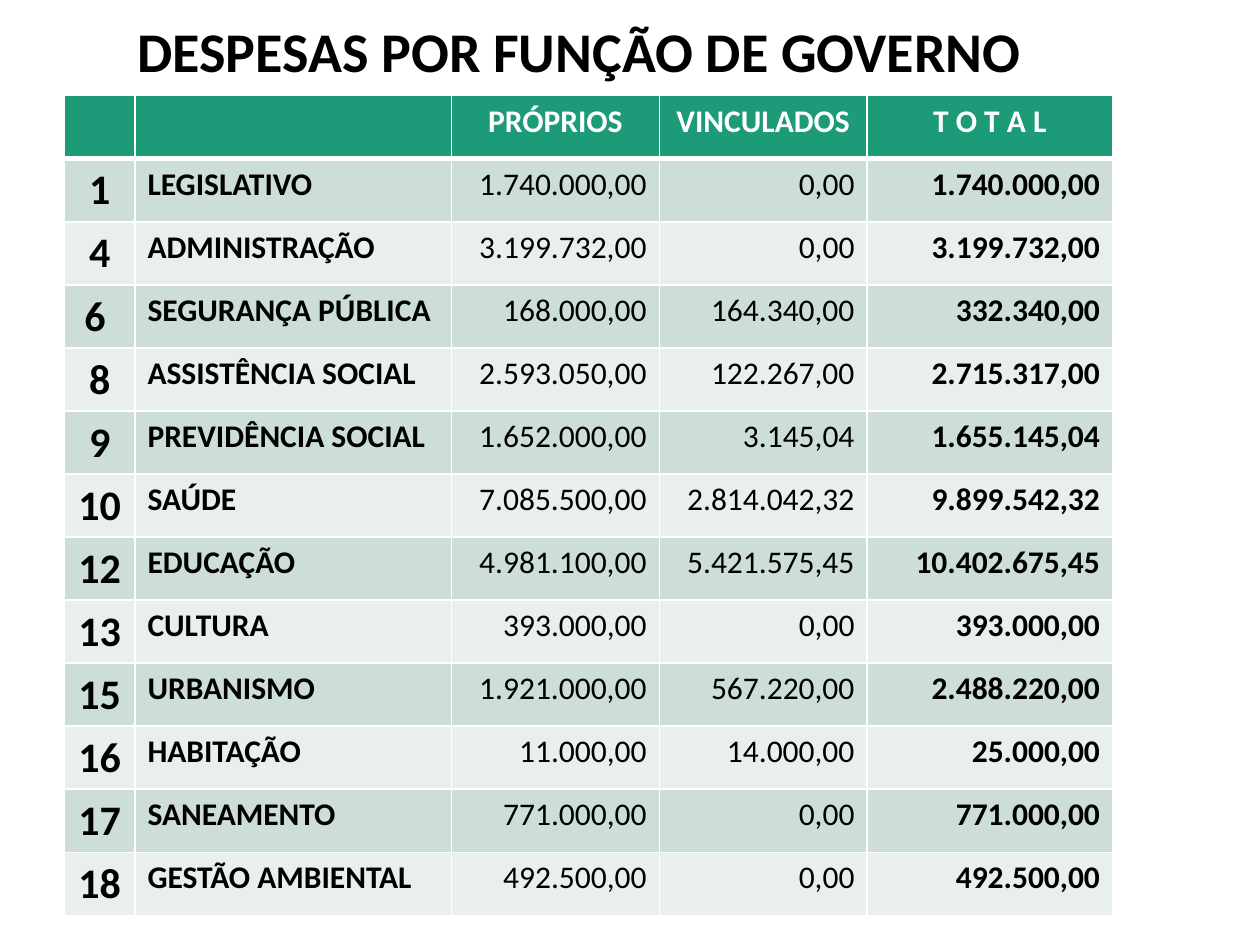
import pptx
import pptx.util
import pptx.dml.color
import pptx.enum.text
import pptx.oxml
import pptx.oxml.ns

Cm, Pt = pptx.util.Cm, pptx.util.Pt
RGBColor = pptx.dml.color.RGBColor
ALIGN = pptx.enum.text.PP_ALIGN
ANCHOR = pptx.enum.text.MSO_ANCHOR

BLACK = RGBColor(0x00, 0x00, 0x00)
WHITE = RGBColor(0xFF, 0xFF, 0xFF)
GREEN = RGBColor(0x1D, 0x9A, 0x78)
BANDS = [RGBColor(0xCD, 0xDE, 0xD6), RGBColor(0xE8, 0xEF, 0xEC)]

TITLE = "DESPESAS POR FUNÇÃO DE GOVERNO"
HEADS = ["", "", "PRÓPRIOS", "VINCULADOS", "T O T A L"]
COSTS = [
    ("1", "LEGISLATIVO", "1.740.000,00", "0,00", "1.740.000,00"),
    ("4", "ADMINISTRAÇÃO", "3.199.732,00", "0,00", "3.199.732,00"),
    ("6 ", "SEGURANÇA PÚBLICA", "168.000,00", "164.340,00", "332.340,00"),
    ("8", "ASSISTÊNCIA SOCIAL", "2.593.050,00", "122.267,00", "2.715.317,00"),
    ("9", "PREVIDÊNCIA SOCIAL", "1.652.000,00", "3.145,04", "1.655.145,04"),
    ("10", "SAÚDE", "7.085.500,00", "2.814.042,32", "9.899.542,32"),
    ("12", "EDUCAÇÃO", "4.981.100,00", "5.421.575,45", "10.402.675,45"),
    ("13", "CULTURA", "393.000,00", "0,00", "393.000,00"),
    ("15", "URBANISMO", "1.921.000,00", "567.220,00", "2.488.220,00"),
    ("16", "HABITAÇÃO", "11.000,00", "14.000,00", "25.000,00"),
    ("17", "SANEAMENTO", "771.000,00", "0,00", "771.000,00"),
    ("18", "GESTÃO AMBIENTAL", "492.500,00", "0,00", "492.500,00"),
]
WIDTHS = [1.42, 6.38, 4.19, 4.19, 4.95]
FORMATS = [
    dict(size=24, bold=True, align=ALIGN.CENTER),
    dict(bold=True, align=ALIGN.LEFT),
    dict(align=ALIGN.RIGHT),
    dict(align=ALIGN.RIGHT),
    dict(bold=True, align=ALIGN.RIGHT),
]


def write(frame, text, size=18, bold=False, color=BLACK, align=ALIGN.LEFT,
          font="Calibri", space=None):
    line = frame.paragraphs[0]
    line.alignment = align
    line.line_spacing = space
    if not text:
        return
    run = line.add_run()
    run.text = text
    run.font.name = font
    run.font.size = Pt(size)
    run.font.bold = bold
    run.font.color.rgb = color


def edge(cell, base):
    """Draw white cell borders; base is the width in points of the lower one."""
    props = cell._tc.get_or_add_tcPr()
    sides = [("L", 1), ("R", 1), ("T", 1), ("B", base)]
    for spot, (side, width) in enumerate(sides):
        props.insert(spot, pptx.oxml.parse_xml(
            f'<a:ln{side} {pptx.oxml.ns.nsdecls("a")} w="{Pt(width)}">'
            f'<a:solidFill><a:srgbClr val="{WHITE}"/></a:solidFill></a:ln{side}>'))


class Page:
    def __init__(self, deck, font):
        self.font = font
        self.slide = deck.slides.add_slide(deck.slide_layouts[6])

    def title(self, text, left, top, width, height):
        box = self.slide.shapes.add_textbox(Cm(left), Cm(top), Cm(width), Cm(height))
        frame = box.text_frame
        frame.word_wrap = True
        frame.vertical_anchor = ANCHOR.MIDDLE
        write(frame, text, size=32, bold=True, align=ALIGN.CENTER,
              font=self.font, space=0.9)

    def cell(self, cell, text, fill, base=1, **style):
        cell.fill.solid()
        cell.fill.fore_color.rgb = fill
        edge(cell, base)
        write(cell.text_frame, text, font=self.font, **style)

    def table(self, heads, rows, left, top, widths, height):
        count = len(rows) + 1
        grid = self.slide.shapes.add_table(
            count, len(heads), Cm(left), Cm(top),
            Cm(sum(widths)), Cm(height * count)).table
        for column, width in zip(grid.columns, widths):
            column.width = Cm(width)
        for row in grid.rows:
            row.height = Cm(height)
        for col, head in enumerate(heads):
            self.cell(grid.cell(0, col), head, GREEN, base=3, bold=True,
                      color=WHITE, align=ALIGN.CENTER)
        for row, texts in enumerate(rows, 1):
            for col, text in enumerate(texts):
                self.cell(grid.cell(row, col), text, BANDS[(row - 1) % 2],
                          **FORMATS[col])


def main():
    deck = pptx.Presentation()
    deck.slide_width, deck.slide_height = Cm(25.4), Cm(19.05)
    page = Page(deck, "Calibri")
    page.title(TITLE, 1.1, 0.33, 21.16, 1.55)
    page.table(HEADS, COSTS, 1.3, 1.93, WIDTHS, 1.27)
    deck.save("out.pptx")


if __name__ == "__main__":
    main()
